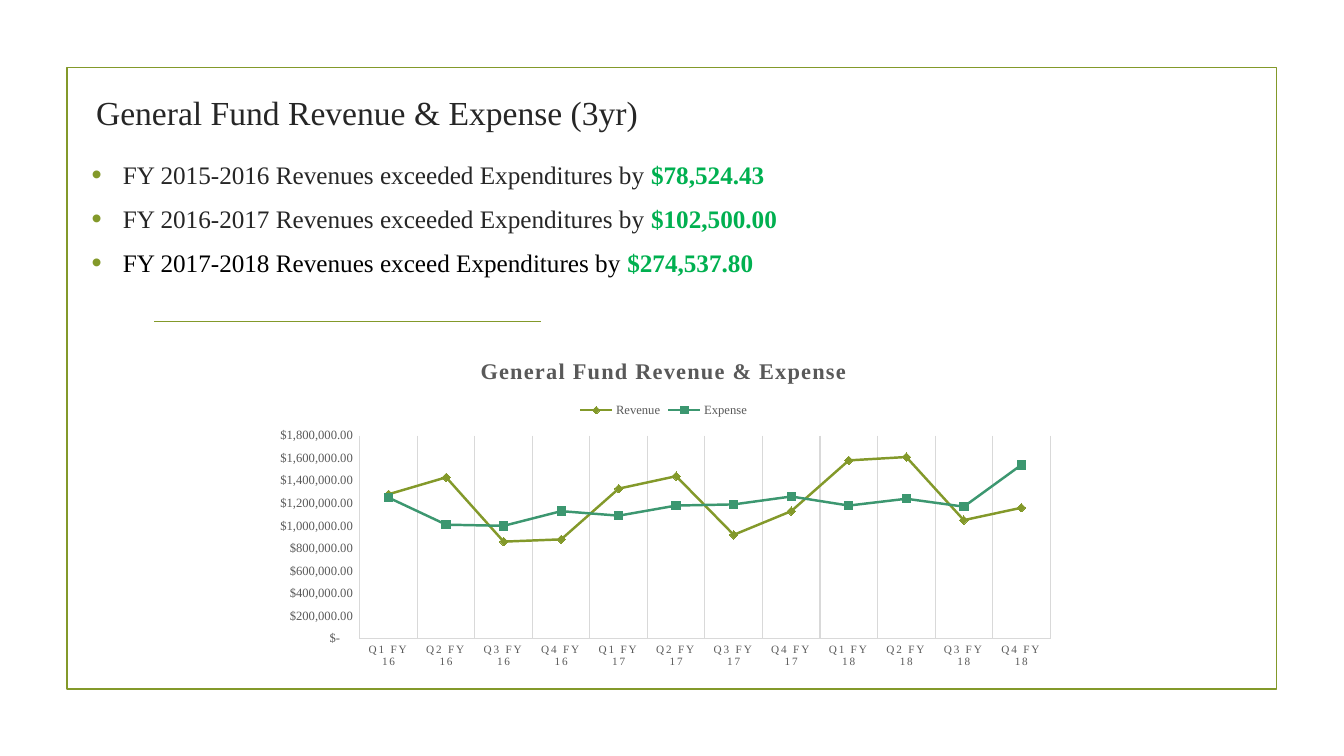
import pptx
import pptx.chart.data
import pptx.dml.color
import pptx.enum.chart
import pptx.enum.shapes
import pptx.enum.text
import pptx.oxml
import pptx.oxml.ns
import pptx.util
from pptx.util import Cm, Pt

RGBColor = pptx.dml.color.RGBColor
OLIVE = RGBColor(0x83, 0x99, 0x2A)
TEAL = RGBColor(0x3C, 0x97, 0x70)
GREEN = RGBColor(0x00, 0xB0, 0x50)
DARK = RGBColor(0x26, 0x26, 0x26)
BLACK = RGBColor(0x00, 0x00, 0x00)
GRAY = RGBColor(0x59, 0x59, 0x59)
LIGHT_GRAY = RGBColor(0xD9, 0xD9, 0xD9)
FONT = "Times New Roman"


def style_font(font, size, color, bold=False):
    font.name = FONT
    font.size = Pt(size)
    font.bold = bold
    font.color.rgb = color


def add_element(parent, tag, **attributes):
    element = pptx.oxml.parse_xml(f"<{tag} {pptx.oxml.ns.nsdecls('a')}/>")
    for name, value in attributes.items():
        element.set(name, value)
    parent.append(element)
    return element


presentation = pptx.Presentation()
presentation.slide_width = Cm(33.87)
presentation.slide_height = Cm(19.05)
slide = presentation.slides.add_slide(presentation.slide_layouts[5])

# Frame and divider
frame = slide.shapes.add_shape(
    pptx.enum.shapes.MSO_SHAPE.RECTANGLE, Cm(1.69), Cm(1.7), Cm(30.48), Cm(15.67))
frame.shadow.inherit = False
frame.fill.background()
divider = slide.shapes.add_connector(
    pptx.enum.shapes.MSO_CONNECTOR.STRAIGHT, Cm(3.89), Cm(8.1), Cm(13.64), Cm(8.1))
add_element(divider.element.spPr, "a:effectLst")
for shape in (frame, divider):
    shape.line.color.rgb = OLIVE
    shape.line.width = Pt(1.25)

# Title
title = slide.shapes.title
title.left, title.top, title.width, title.height = Cm(1.3), Cm(0.66), Cm(15.9), Cm(2.79)
title.text_frame.word_wrap = True
title.text_frame.auto_size = pptx.enum.text.MSO_AUTO_SIZE.NONE
title.text_frame.vertical_anchor = pptx.enum.text.MSO_ANCHOR.BOTTOM
paragraph = title.text_frame.paragraphs[0]
paragraph.alignment = pptx.enum.text.PP_ALIGN.CENTER
run = paragraph.add_run()
run.text = "General Fund Revenue & Expense (3yr)"
style_font(run.font, 24, DARK)

# Yearly results
results = [
    ("FY 2015-2016 Revenues exceeded Expenditures by ", "$78,524.43", DARK),
    ("FY 2016-2017 Revenues exceeded Expenditures by ", "$102,500.00", DARK),
    ("FY 2017-2018 Revenues exceed Expenditures by ", "$274,537.80", BLACK),
]
text_box = slide.shapes.add_textbox(Cm(2.06), Cm(3.89), Cm(25.88), Cm(3.96))
text_frame = text_box.text_frame
text_frame.word_wrap = True
for index, (statement, amount, color) in enumerate(results):
    paragraph = text_frame.add_paragraph() if index else text_frame.paragraphs[0]
    properties = paragraph._p.get_or_add_pPr()
    properties.set("marL", str(Cm(0.79)))
    properties.set("indent", str(-Cm(0.79)))
    bullet_color = add_element(properties, "a:buClr")
    add_element(bullet_color, "a:srgbClr", val=str(OLIVE))
    add_element(properties, "a:buSzPct", val="115000")
    add_element(properties, "a:buFont", typeface="Arial")
    add_element(properties, "a:buChar", char="•")
    paragraph.space_after = Pt(6)
    if index:
        paragraph.space_before = Pt(4)
    for text, text_color, bold in ((statement, color, False), (amount, GREEN, True)):
        run = paragraph.add_run()
        run.text = text
        style_font(run.font, 18, text_color, bold)

# Chart data
chart_data = pptx.chart.data.CategoryChartData()
chart_data.categories = [f"Q{quarter} FY {year}" for year in (16, 17, 18) for quarter in (1, 2, 3, 4)]
chart_data.add_series("Revenue", [
    1280000, 1430000, 860000, 880000, 1330000, 1440000,
    920000, 1130000, 1580000, 1610000, 1050000, 1160000])
chart_data.add_series("Expense", [
    1250000, 1010000, 1000000, 1130000, 1090000, 1180000,
    1190000, 1260000, 1180000, 1240000, 1170000, 1540000])
chart = slide.shapes.add_chart(
    pptx.enum.chart.XL_CHART_TYPE.LINE_MARKERS,
    Cm(6.58), Cm(8.59), Cm(20.29), Cm(8.41), chart_data).chart
style_font(chart.font, 10, BLACK)
chart.plots[0].vary_by_categories = False

# Chart title and legend
chart.has_title = True
run = chart.chart_title.text_frame.paragraphs[0].add_run()
run.text = "General Fund Revenue & Expense"
style_font(run.font, 16, GRAY, True)
run._r.get_or_add_rPr().set("spc", "100")
chart.has_legend = True
chart.legend.position = pptx.enum.chart.XL_LEGEND_POSITION.TOP
chart.legend.include_in_layout = False
style_font(chart.legend.font, 9, GRAY)

# Axes
for axis, size in ((chart.category_axis, 8), (chart.value_axis, 9)):
    axis.major_tick_mark = pptx.enum.chart.XL_TICK_MARK.NONE
    axis.minor_tick_mark = pptx.enum.chart.XL_TICK_MARK.NONE
    axis.format.line.color.rgb = LIGHT_GRAY
    axis.format.line.width = Pt(0.75)
    style_font(axis.tick_labels.font, size, GRAY)
chart.category_axis.has_major_gridlines = True
gridline = chart.category_axis.major_gridlines.format.line
gridline.color.rgb = LIGHT_GRAY
gridline.width = Pt(0.75)
for label_properties in chart.category_axis._element.iter(pptx.oxml.ns.qn("a:defRPr")):
    label_properties.set("spc", "120")
value_axis = chart.value_axis
value_axis.has_major_gridlines = False
value_axis.minimum_scale = 0
value_axis.maximum_scale = 1800000
value_axis.major_unit = 200000
value_axis.tick_labels.number_format = '_("$"* #,##0.00_);_("$"* \\(#,##0.00\\);_("$"* "-"??_);_(@_)'
value_axis.tick_labels.number_format_is_linked = False

# Series
marker_styles = pptx.enum.chart.XL_MARKER_STYLE
series_styles = ((OLIVE, marker_styles.DIAMOND), (TEAL, marker_styles.SQUARE))
for series, (color, marker_style) in zip(chart.plots[0].series, series_styles):
    series.smooth = False
    series.format.line.color.rgb = color
    series.format.line.width = Pt(1.75)
    series.marker.style = marker_style
    series.marker.size = 6
    series.marker.format.fill.solid()
    series.marker.format.fill.fore_color.rgb = color
    series.marker.format.line.color.rgb = color

presentation.save("out.pptx")
